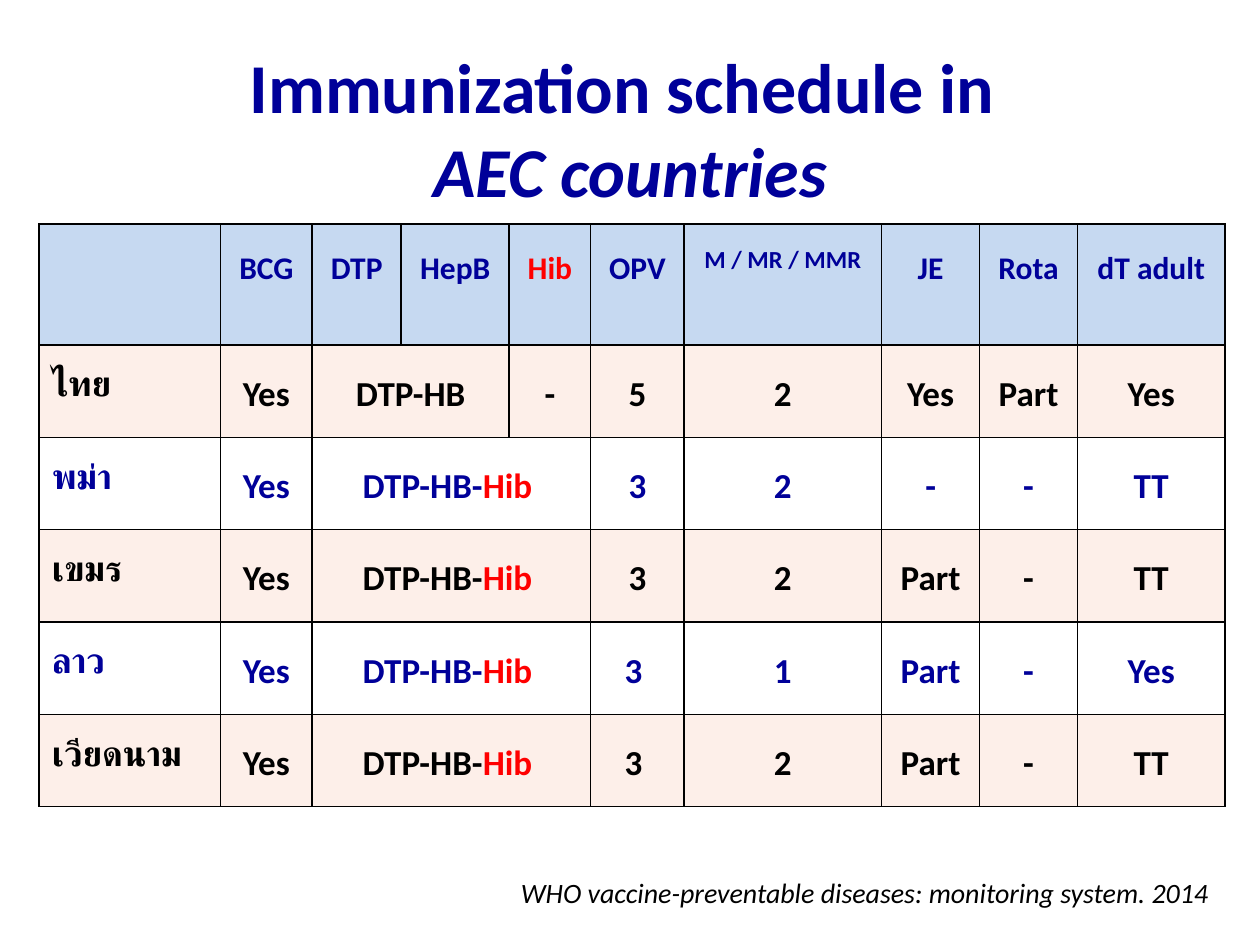
"""Build the immunization schedule slide for the AEC countries."""
from lxml import etree
from pptx import Presentation
from pptx.dml.color import RGBColor
from pptx.enum.text import MSO_ANCHOR, MSO_AUTO_SIZE, PP_ALIGN
from pptx.oxml.ns import qn
from pptx.util import Pt

LEFT, CENTER, RIGHT = PP_ALIGN.LEFT, PP_ALIGN.CENTER, PP_ALIGN.RIGHT
MIDDLE = MSO_ANCHOR.MIDDLE
NO_FIT, GROW = MSO_AUTO_SIZE.NONE, MSO_AUTO_SIZE.SHAPE_TO_FIT_TEXT

TITLE = ("Immunization schedule in ", "AEC countries")
SOURCE = "WHO vaccine-preventable diseases: monitoring system. 2014"
HEADERS = ["", "BCG", "DTP", "HepB", "Hib", "OPV", "M / MR / MMR", "JE", "Rota", "dT adult"]
COMBINED = ("DTP-HB-", "Hib ")
COUNTRIES = [
    ["ไทย", "Yes", "DTP-HB", None, "-", "5", "2", "Yes", "Part", "Yes"],
    ["พม่า", "Yes", COMBINED, None, None, "3", "2", "-", "-", "TT"],
    ["เขมร", "Yes", COMBINED, None, None, "3", "2", "Part", "-", "TT"],
    ["ลาว", "Yes", COMBINED, None, None, "3 ", "1", "Part", "-", "Yes"],
    ["เวียดนาม", "Yes", COMBINED, None, None, "3 ", "2", "Part", "-", "TT"],
]

THEME = {
    "font": "Calibri",
    "navy": "000099", "red": "FF0000", "black": "000000",
    "header": "C6D9F1", "peach": "FDEFE9", "white": "FFFFFF",
    "title": 40, "head": 18, "small": 14, "body": 20, "source": 16,
}
TITLE_BOX = (36, 28, 648, 90)
TABLE_ORIGIN = (22.4, 128.1)
COLUMN_WIDTHS = [103.7, 52.3, 50.9, 61.7, 46.6, 53.4, 112.9, 56, 56, 84.3]
ROW_HEIGHTS = [69] + [52.8] * len(COUNTRIES)
SOURCE_BOX = (285.1, 496.8, 412.6, 26.6)


def assign(target, values):
    for name, value in values.items():
        setattr(target, name, value)


def add_span(para, text, size, color, bold=True, italic=False):
    span = para.add_run()
    span.text = text
    assign(span.font, {"name": THEME["font"], "size": Pt(THEME[size]),
                       "bold": bold, "italic": italic})
    span.font.color.rgb = RGBColor.from_string(THEME[color])


def add_borders(cell):
    properties = cell._tc.get_or_add_tcPr()
    for side in ("a:lnL", "a:lnR", "a:lnT", "a:lnB"):
        line = etree.SubElement(properties, qn(side), w=str(Pt(1)))
        fill = etree.SubElement(line, qn("a:solidFill"))
        etree.SubElement(fill, qn("a:srgbClr"), val=THEME["black"])


def fill_cell(cell, content, column, size, color, fill):
    add_borders(cell)
    cell.fill.solid()
    cell.fill.fore_color.rgb = RGBColor.from_string(THEME[fill])
    if not content:
        return
    para = cell.text_frame.paragraphs[0]
    assign(para, {"alignment": CENTER if column else LEFT, "line_spacing": 1.5})
    for text in (content if isinstance(content, tuple) else (content,)):
        add_span(para, text, size, "red" if text.strip() == "Hib" else color)


def add_title(page):
    box = page.shapes.title
    assign(box, dict(zip(("left", "top", "width", "height"), map(Pt, TITLE_BOX))))
    assign(box.text_frame, {"vertical_anchor": MIDDLE, "auto_size": NO_FIT, "word_wrap": True})
    para = box.text_frame.paragraphs[0]
    para.alignment = CENTER
    add_span(para, TITLE[0], "title", "navy")
    para.add_line_break()
    add_span(para, TITLE[1], "title", "navy", italic=True)


def add_schedule(page):
    extent = (sum(COLUMN_WIDTHS), sum(ROW_HEIGHTS))
    table = page.shapes.add_table(len(ROW_HEIGHTS), len(COLUMN_WIDTHS),
                                  *map(Pt, TABLE_ORIGIN + extent)).table
    for column, width in zip(table.columns, COLUMN_WIDTHS):
        column.width = Pt(width)
    for row, height in zip(table.rows, ROW_HEIGHTS):
        row.height = Pt(height)
    for index, text in enumerate(HEADERS):
        size = "small" if "/" in text else "head"
        fill_cell(table.cell(0, index), text, index, size, "navy", "header")
    for number, values in enumerate(COUNTRIES, 1):
        color, fill = ("black", "peach") if number % 2 else ("navy", "white")
        for index, content in enumerate(values):
            fill_cell(table.cell(number, index), content, index, "body", color, fill)
        table.cell(number, 2).merge(table.cell(number, 2 + values.count(None)))


def add_source(page):
    frame = page.shapes.add_textbox(*map(Pt, SOURCE_BOX)).text_frame
    assign(frame, {"word_wrap": False, "auto_size": GROW})
    para = frame.paragraphs[0]
    para.alignment = RIGHT
    add_span(para, SOURCE, "source", "black", bold=False, italic=True)


def main():
    deck = Presentation()
    assign(deck, {"slide_width": Pt(720), "slide_height": Pt(540)})
    page = deck.slides.add_slide(deck.slide_layouts[5])
    add_title(page)
    add_schedule(page)
    add_source(page)
    deck.save("out.pptx")


if __name__ == "__main__":
    main()
